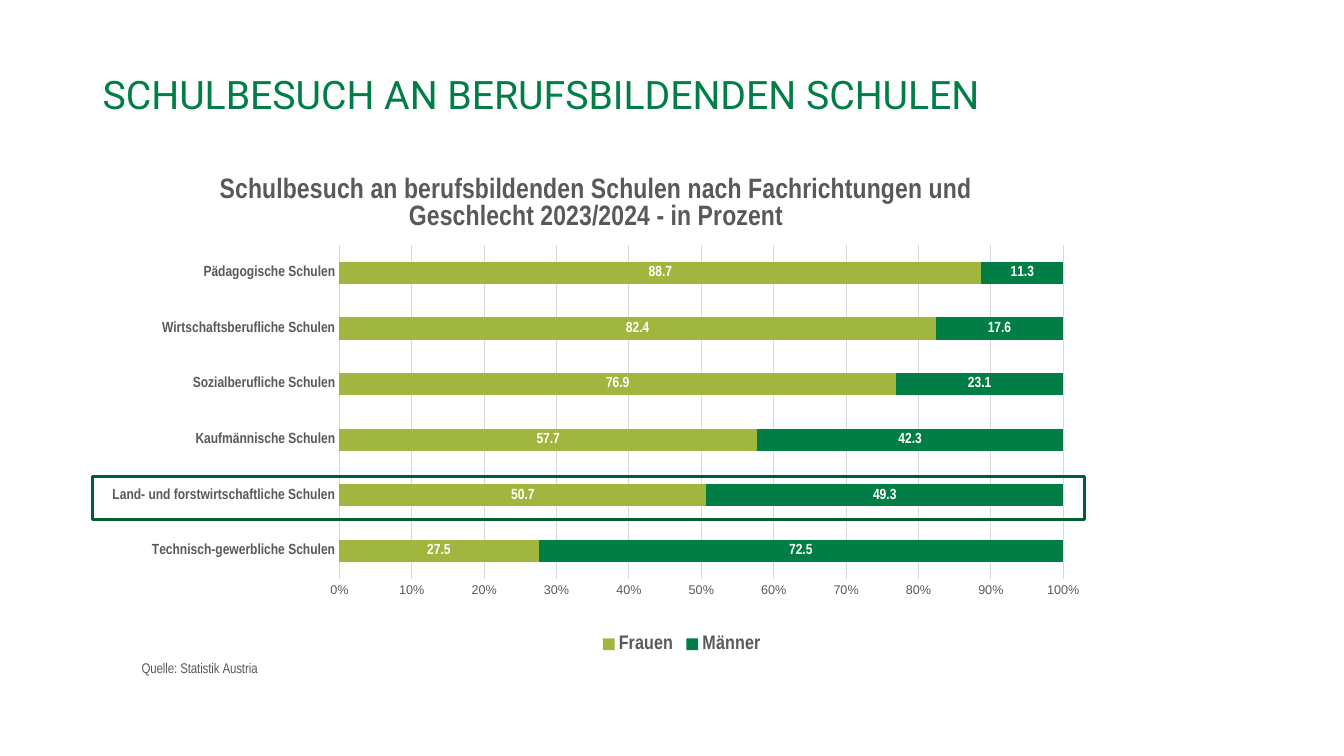
from lxml import etree
from pptx import Presentation
from pptx.chart.data import CategoryChartData
from pptx.dml.color import RGBColor
from pptx.enum.chart import XL_CHART_TYPE as ChartType, XL_LABEL_POSITION as LabelPos
from pptx.enum.chart import XL_LEGEND_POSITION as LegendPos, XL_TICK_MARK as TickMark
from pptx.enum.shapes import MSO_SHAPE as Shape
from pptx.enum.text import MSO_ANCHOR as Anchor
from pptx.oxml.ns import qn
from pptx.util import Cm, Pt

COLORS = {"green": "007E46", "lime": "A0B63E", "frame": "005D34",
          "text": "595959", "grid": "D9D9D9", "white": "FFFFFF"}
NARROW = "Arial Narrow"


def write(text, frame=None, font=None, size=10.5, name=NARROW, color="text",
          bold=False, spacing=None):
    """Put text into a frame, or format a given chart font when text is None."""
    if frame is not None:
        frame.text = text
        paragraph = frame.paragraphs[0]
        paragraph.line_spacing = spacing
        font = paragraph.runs[0].font
    font.size, font.name, font.bold = Pt(size), name, bold
    font.color.rgb = RGBColor.from_string(COLORS[color])


def place(element, index, **fractions):
    """Set a manual layout, in fractions of the chart area."""
    for old in element.findall(qn("c:layout")):
        element.remove(old)
    layout = etree.Element(qn("c:layout"))
    manual = etree.SubElement(layout, qn("c:manualLayout"))
    if element.tag == qn("c:plotArea"):
        etree.SubElement(manual, qn("c:layoutTarget"), val="inner")
    for axis in "xy":
        etree.SubElement(manual, qn(f"c:{axis}Mode"), val="edge")
    for key, value in fractions.items():
        etree.SubElement(manual, qn(f"c:{key}"), val=str(value))
    element.insert(index, layout)


prs = Presentation()
prs.slide_width, prs.slide_height = Cm(33.87), Cm(19.05)
slide = prs.slides.add_slide(prs.slide_layouts[6])
left, width = Cm(2.34), Cm(25.37)

# Heading
heading = slide.shapes.add_textbox(left, Cm(1.83), width, Cm(1.24)).text_frame
heading.word_wrap = True
heading.vertical_anchor = Anchor.MIDDLE
write("SCHULBESUCH AN BERUFSBILDENDEN SCHULEN", heading, size=28, name="Roboto",
      color="green", spacing=0.9)

# Share of women and men by type of school
women_share = {
    "Technisch-gewerbliche Schulen": 27.5,
    "Land- und forstwirtschaftliche Schulen": 50.7,
    "Kaufmännische Schulen": 57.7,
    "Sozialberufliche Schulen": 76.9,
    "Wirtschaftsberufliche Schulen": 82.4,
    "Pädagogische Schulen": 88.7,
}
shares = CategoryChartData(number_format="0.0")
shares.categories = list(women_share)
shares.add_series("Frauen", list(women_share.values()))
shares.add_series("Männer", [round(100 - share, 1) for share in women_share.values()])
chart = slide.shapes.add_chart(ChartType.BAR_STACKED_100, left, Cm(3.86), width,
                               Cm(13.31), shares).chart
write(None, font=chart.font, size=10, name="Arial")
place(chart.plots[0]._element.getparent(), 0, x=0.245, y=0.174, w=0.719, h=0.632)

# Chart title
chart.has_title = True
write("Schulbesuch an berufsbildenden Schulen nach Fachrichtungen und Geschlecht "
      "2023/2024 - in Prozent", chart.chart_title.text_frame, size=20, bold=True)
chart.chart_title.include_in_layout = False

# Bars and their values
plot = chart.plots[0]
plot.gap_width, plot.overlap = 150, 100
for gender, color in zip(plot.series, ("lime", "green")):
    gender.format.fill.solid()
    gender.format.fill.fore_color.rgb = RGBColor.from_string(COLORS[color])
    labels = gender.data_labels
    labels.show_value = True
    labels.position = LabelPos.CENTER
    labels.number_format, labels.number_format_is_linked = "0.0", False
    write(None, font=labels.font, color="white", bold=True)

# Axes
schools, percent = chart.category_axis, chart.value_axis
for axis in (schools, percent):
    axis.major_tick_mark = axis.minor_tick_mark = TickMark.NONE
write(None, font=schools.tick_labels.font, bold=True)
write(None, font=percent.tick_labels.font, size=9, name="Arial")
percent.tick_labels.number_format = "0%"
percent.tick_labels.number_format_is_linked = False
percent.format.line.fill.background()
for line in (schools.format.line, percent.major_gridlines.format.line):
    line.width = Pt(0.75)
    line.color.rgb = RGBColor.from_string(COLORS["grid"])

# Source, as title of the value axis
source = percent.axis_title
write("Quelle: Statistik Austria", source.text_frame, size=10)
place(source._element, 1, x=0.046, y=0.96)

# Legend
chart.has_legend = True
legend = chart.legend
legend.position = LegendPos.BOTTOM
legend.include_in_layout = False
write(None, font=legend.font, size=14, bold=True)
place(legend._element, 1, x=0.5, y=0.9, w=0.17, h=0.06)

# Frame around the agricultural and forestry schools
highlight = slide.shapes.add_shape(Shape.RECTANGLE, left, Cm(12.01), Cm(24.99), Cm(1.09))
highlight.shadow.inherit = False
highlight.fill.background()
highlight.line.width = Pt(2.25)
highlight.line.color.rgb = RGBColor.from_string(COLORS["frame"])

prs.save("out.pptx")
